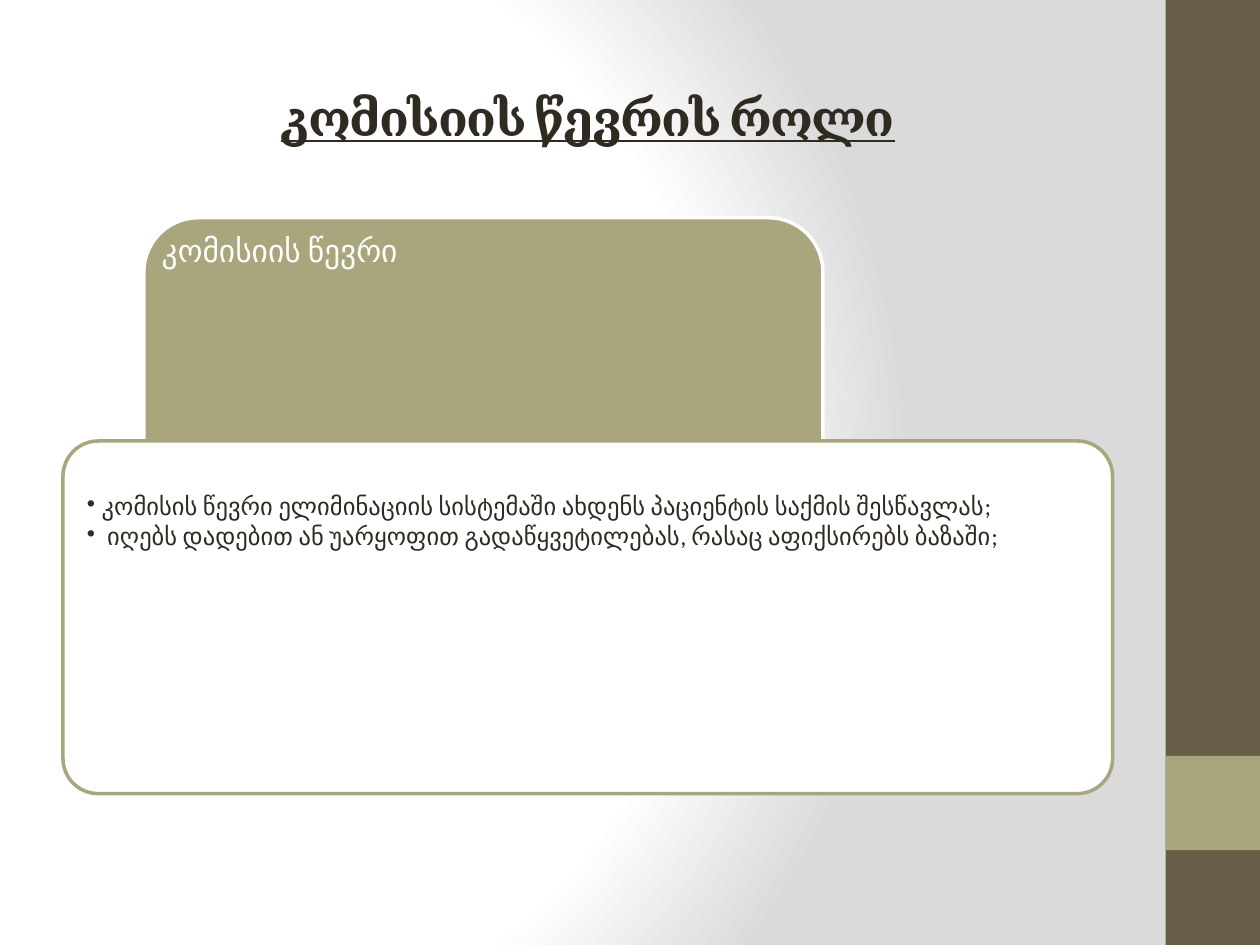
from pptx import Presentation
from pptx.dml.color import RGBColor
from pptx.enum.shapes import MSO_SHAPE as Shape
from pptx.enum.text import MSO_ANCHOR as Anchor, PP_ALIGN as Align
from pptx.oxml import parse_xml
from pptx.oxml.ns import nsdecls, qn
from pptx.util import Cm, Pt

DARK, OLIVE, BROWN, WHITE = "2F2B20", "A9A57C", "675E47", "FFFFFF"


def color(value):
    return RGBColor.from_string(value)


class SlideBuilder:
    """Holds the current slide and draws styled elements on it."""

    def __init__(self, slide, font="Calibri"):
        self.slide = slide
        self.font = font

    def background(self, stops, focus):
        stop_xml = "".join(
            f'<a:gs pos="{position * 1000}"><a:srgbClr val="{value}"/></a:gs>'
            for position, value in stops)
        sides = " ".join(f'{side}="{value * 1000}"' for side, value in zip("ltrb", focus))
        self.slide.element.cSld.insert(0, parse_xml(
            f'<p:bg {nsdecls("p", "a")}><p:bgPr><a:gradFill rotWithShape="1">'
            f'<a:gsLst>{stop_xml}</a:gsLst><a:path path="circle">'
            f'<a:fillToRect {sides}/></a:path></a:gradFill>'
            f'<a:effectLst/></p:bgPr></p:bg>'))

    def box(self, kind, bounds, fill, line=None, rounding=None):
        shape = self.slide.shapes.add_shape(kind, *map(Cm, bounds))
        shape.shadow.inherit = False
        shape.fill.solid()
        shape.fill.fore_color.rgb = color(fill)
        if line:
            shape.line.color.rgb = color(line)
            shape.line.width = Pt(2)
        else:
            shape.line.fill.background()
        if rounding:
            shape.adjustments[0] = rounding

    def text(self, bounds, lines, size, ink, insets, font=None, spacing=None, after=0):
        frame = self.slide.shapes.add_textbox(*map(Cm, bounds)).text_frame
        frame.word_wrap = True
        (frame.margin_left, frame.margin_top,
         frame.margin_right, frame.margin_bottom) = map(Cm, insets)
        frame.text = "\n".join(lines)
        for paragraph in frame.paragraphs:
            paragraph.font.size = Pt(size)
            paragraph.font.name = font or self.font
            paragraph.font.color.rgb = color(ink)
            paragraph.line_spacing = spacing
            paragraph.space_after = Pt(after)
        return frame

    def title(self, bounds, wording):
        frame = self.text(bounds, [wording], 28, DARK, (0.25, 0.13, 0.25, 0.13), "Cambria")
        frame.vertical_anchor = Anchor.MIDDLE
        paragraph = frame.paragraphs[0]
        paragraph.alignment = Align.CENTER
        paragraph.font.bold = True
        paragraph.font.underline = True
        paragraph.runs[0].font.size = Pt(28)
        paragraph.runs[0].font._element.set("spc", "-100")

    def bullets(self, bounds, lines, indent):
        frame = self.text(bounds, lines, 14, DARK, (0.28, 0.9, 0.28, 0.28),
                          spacing=0.9, after=2.1)
        for paragraph in frame.paragraphs:
            properties = paragraph._p.get_or_add_pPr()
            properties.set("marL", str(Cm(indent)))
            properties.set("indent", str(-Cm(indent)))
            bullet = parse_xml(f'<a:buChar {nsdecls("a")} char="•"/>')
            properties.find(qn("a:defRPr")).addprevious(bullet)


def main():
    presentation = Presentation()
    presentation.slide_width, presentation.slide_height = Cm(25.4), Cm(19.05)
    builder = SlideBuilder(presentation.slides.add_slide(presentation.slide_layouts[6]))
    builder.background([(0, WHITE), (75, WHITE), (100, "DADADA")], (20, 50, 100, 50))
    builder.box(Shape.RECTANGLE, (23.5, 0, 1.9, 19.05), BROWN)
    builder.box(Shape.RECTANGLE, (23.5, 15.24, 1.9, 1.9), OLIVE)
    builder.title((1.27, 0.76, 21.16, 3.18), "კომისიის წევრის როლი")
    builder.box(Shape.ROUNDED_RECTANGLE, (2.9, 4.39, 13.69, 10.97), OLIVE, WHITE, 0.1)
    builder.text((2.9, 4.39, 13.69, 7.32), ["კომისიის წევრი"], 18, WHITE,
                 (0.36, 0.36, 0.36, 0.18), spacing=0.9, after=6.3)
    builder.box(Shape.ROUNDED_RECTANGLE, (1.27, 8.89, 21.16, 7.11), WHITE, OLIVE, 0.1)
    builder.bullets((1.47, 9.09, 20.75, 6.71), [
        "კომისის წევრი ელიმინაციის სისტემაში ახდენს პაციენტის საქმის შესწავლას;",
        " იღებს დადებით ან უარყოფით გადაწყვეტილებას, რასაც აფიქსირებს ბაზაში;",
    ], 0.3)
    presentation.save("out.pptx")


if __name__ == "__main__":
    main()
